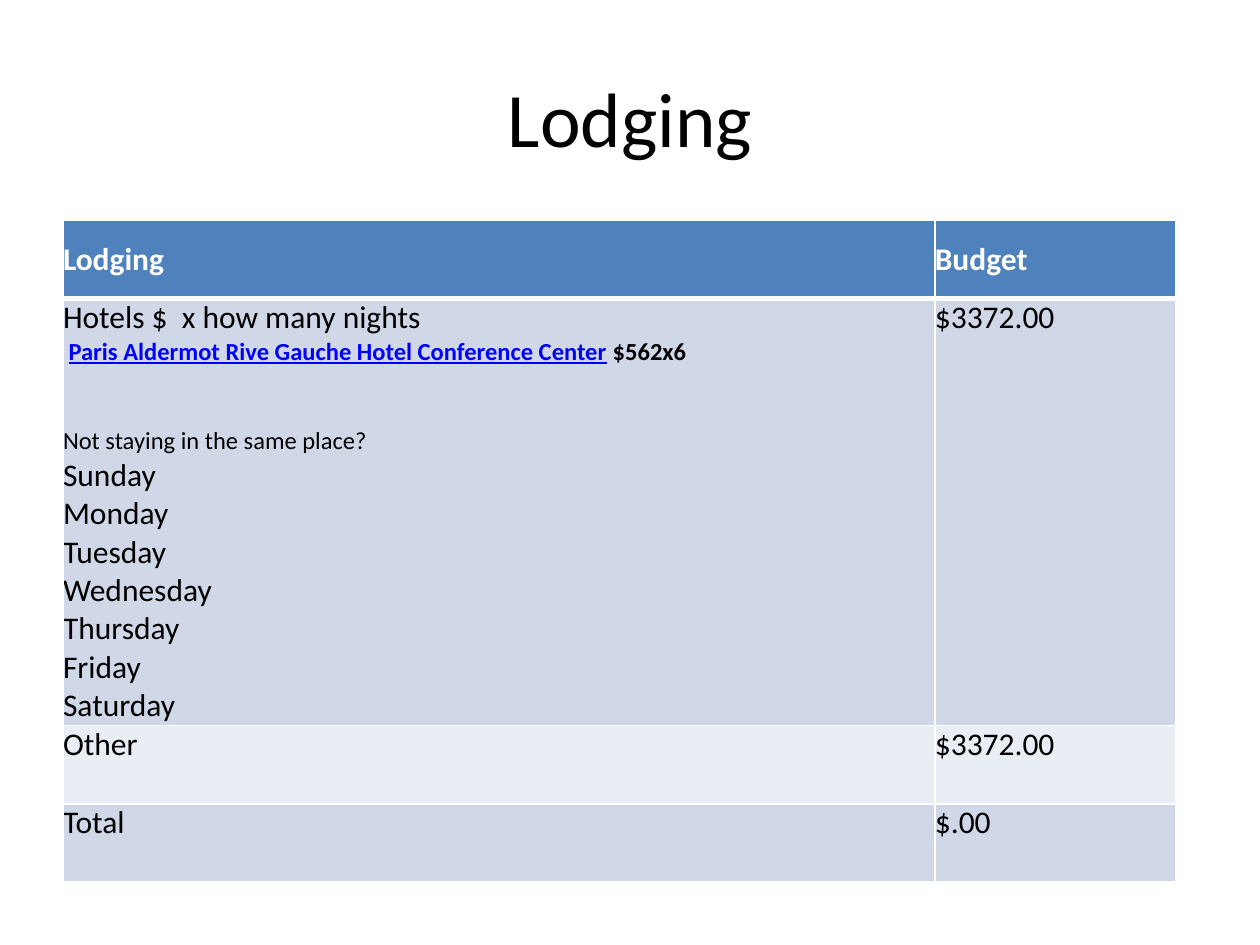
from lxml import etree
from pptx import Presentation
from pptx.dml.color import RGBColor
from pptx.enum.text import MSO_ANCHOR, PP_ALIGN
from pptx.oxml.ns import qn
from pptx.util import Inches, Pt

MID, TOP = MSO_ANCHOR.MIDDLE, MSO_ANCHOR.TOP
CENTER = PP_ALIGN.CENTER
HUES = {"head": "4F81BD", "odd": "D0D8E8", "even": "E9EDF4",
        "white": "FFFFFF", "black": "000000", "link": "0000FF"}
BODY = {"size": Pt(18), "bold": False}
HEAD = {"size": Pt(18), "bold": True}
NOTE = {"size": Pt(14), "bold": False}
HOTEL = {"size": Pt(14), "bold": True}
DAYS = ["Sunday", "Monday", "Tuesday", "Wednesday", "Thursday", "Friday", "Saturday"]
STAY = [
    [("Hotels $  x how many nights", BODY, "black")],
    [(" ", HOTEL, "black"),
     ("Paris Aldermot Rive Gauche Hotel Conference Center", {**HOTEL, "underline": True}, "link"),
     (" $562x6", HOTEL, "black")],
    [("Not staying in the same place?", NOTE, "black")],
    *[[(day, BODY, "black")] for day in DAYS],
]
ROWS = [
    ("head", 0.62, "Lodging", "Budget"),
    ("odd", 3.39, STAY, "$3372.00"),
    ("even", 0.62, "Other", "$3372.00"),
    ("odd", 0.62, "Total", "$.00"),
]


class Deck:
    """Hold the style and the current slide."""

    def __init__(self, font):
        self.font = font
        self.deck = Presentation()
        self.deck.slide_width, self.deck.slide_height = Inches(10), Inches(7.5)
        self.slide = self.deck.slides.add_slide(self.deck.slide_layouts[5])

    def text(self, para, words, style, hue):
        run = para.add_run()
        run.text = words
        for key, value in {"name": self.font, **style}.items():
            setattr(run.font, key, value)
        run.font.color.rgb = RGBColor.from_string(HUES[hue])

    def title(self, words):
        box = self.slide.shapes.title
        place = {"left": 0.5, "top": 0.3, "width": 9, "height": 1.25}
        for key, value in place.items():
            setattr(box, key, Inches(value))
        box.text_frame.vertical_anchor = MID
        para = box.text_frame.paragraphs[0]
        para.alignment = CENTER
        self.text(para, words, {"size": Pt(44)}, "black")

    def edge(self, cell, side, width):
        line = etree.SubElement(cell._tc.get_or_add_tcPr(), qn(f"a:ln{side}"), w=str(Pt(width)))
        fill = etree.SubElement(line, qn("a:solidFill"))
        etree.SubElement(fill, qn("a:srgbClr"), val=HUES["white"])

    def cell(self, cell, lines, row, hue):
        head = row == 0
        for side in "LRTB":
            thick = (side == "B" and head) or (side == "T" and row == 1)
            self.edge(cell, side, 3 if thick else 1)
        cell.fill.solid()
        cell.fill.fore_color.rgb = RGBColor.from_string(HUES[hue])
        for side in ("left", "right", "top", "bottom"):
            setattr(cell, f"margin_{side}", 0)
        cell.vertical_anchor = MID if head else TOP
        if isinstance(lines, str):
            lines = [[(lines, HEAD if head else BODY, "white" if head else "black")]]
        frame = cell.text_frame
        for num, runs in enumerate(lines):
            para = frame.add_paragraph() if num else frame.paragraphs[0]
            if runs[0][1] is NOTE:
                para.space_before = Pt(34)
            for run in runs:
                self.text(para, *run)

    def table(self, left, top, widths, rows):
        high = sum(row[1] for row in rows)
        grid = self.slide.shapes.add_table(
            len(rows), len(widths), Inches(left), Inches(top),
            Inches(sum(widths)), Inches(high)).table
        for col, width in zip(grid.columns, widths):
            col.width = Inches(width)
        for num, (hue, height, *texts) in enumerate(rows):
            grid.rows[num].height = Inches(height)
            for col, lines in enumerate(texts):
                self.cell(grid.cell(num, col), lines, num, hue)


def main():
    show = Deck("Calibri")
    show.title("Lodging")
    show.table(0.5, 1.75, [6.92, 1.91], ROWS)
    show.deck.save("out.pptx")


if __name__ == "__main__":
    main()
